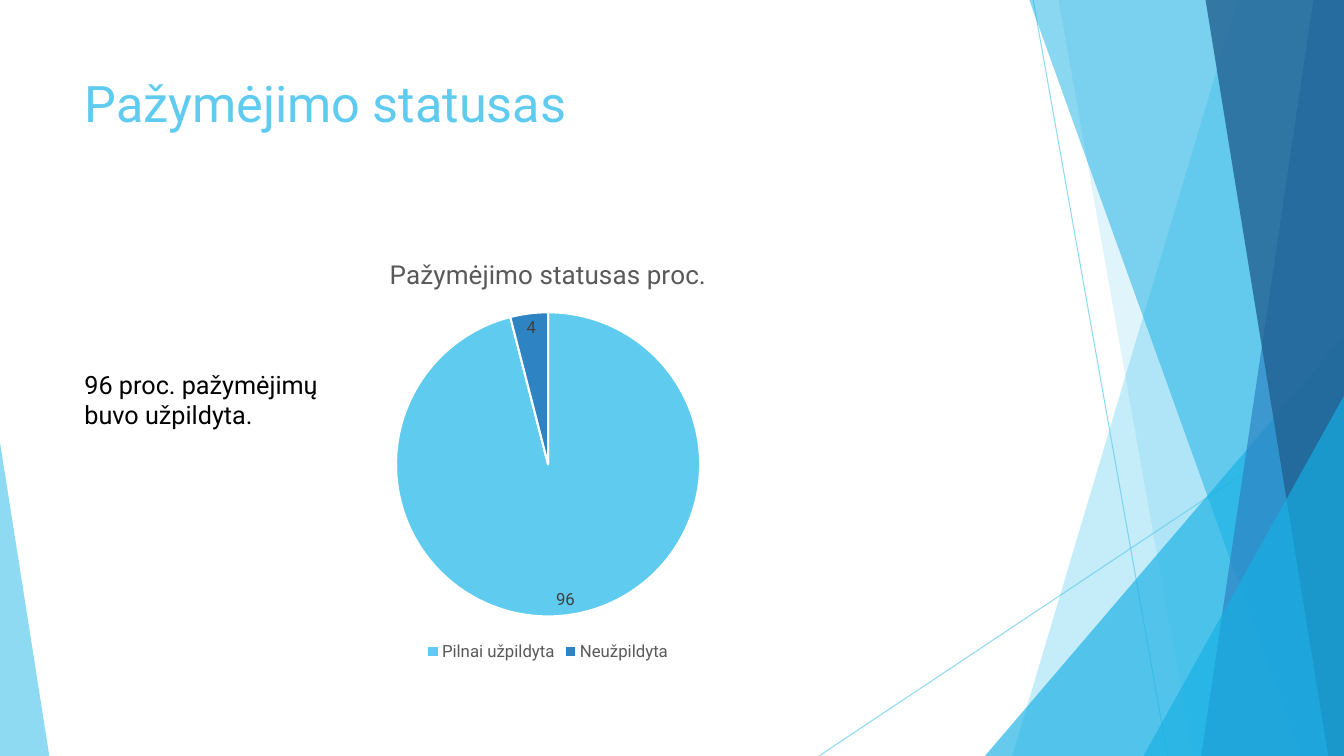
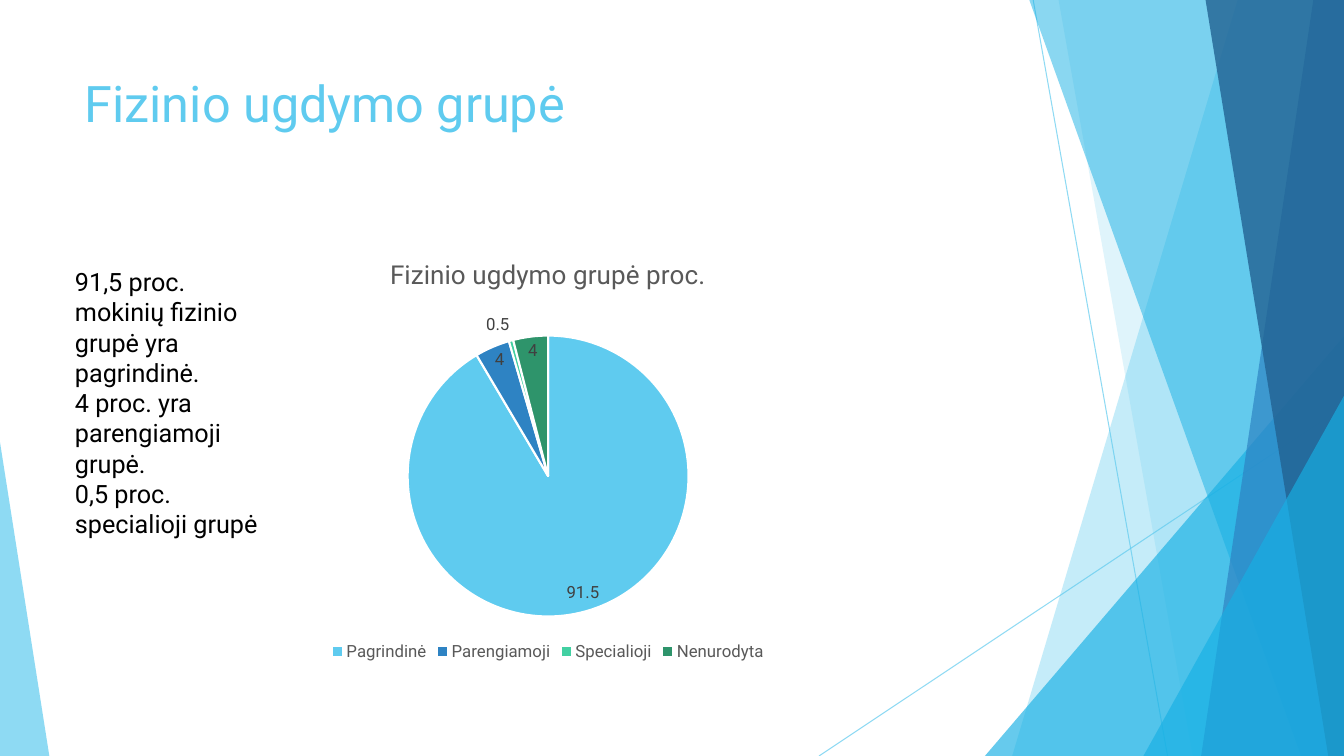
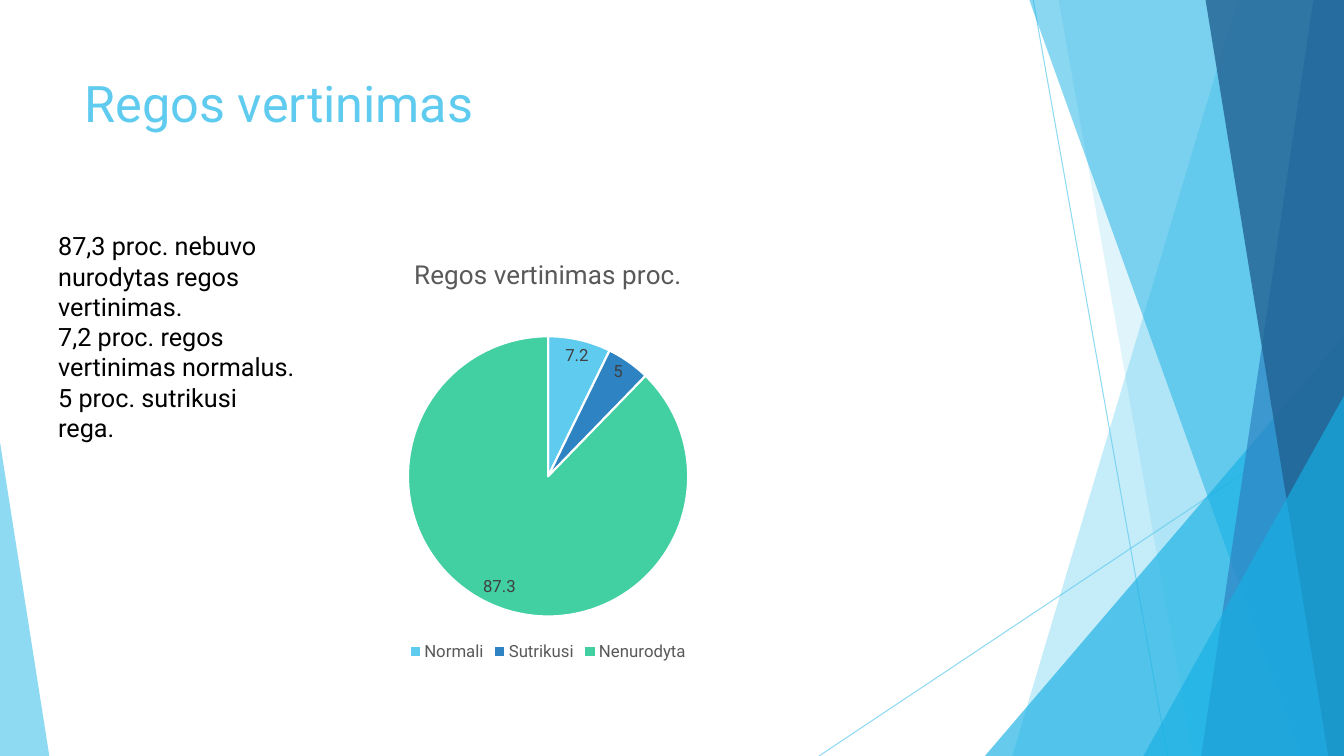
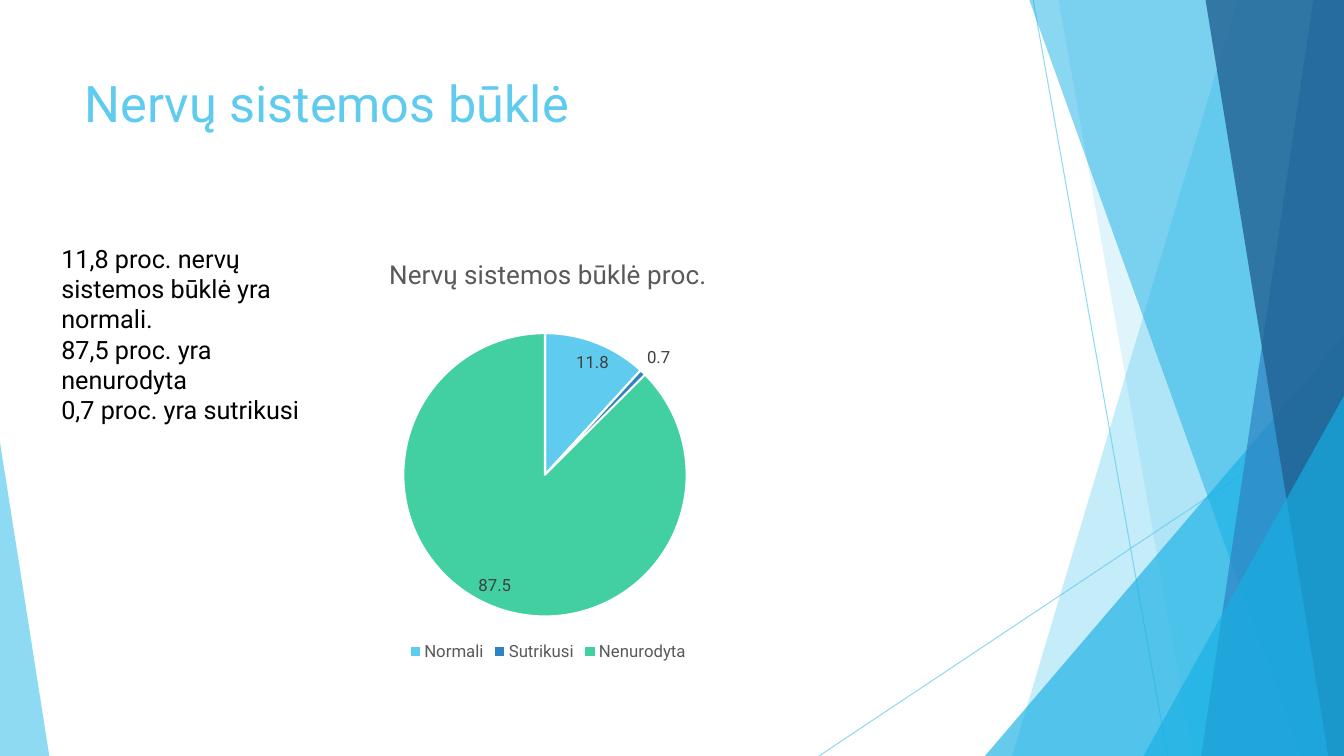
import pptx
import pptx.chart.data
import pptx.dml.color
import pptx.enum.chart
import pptx.enum.shapes
import pptx.enum.text
import pptx.oxml.ns
import pptx.util
import lxml.etree

RGB = pptx.dml.color.RGBColor
SKY = RGB(0x5F, 0xCB, 0xEF)
CYAN = RGB(0x17, 0xB0, 0xE4)
BLUE = RGB(0x2E, 0x83, 0xC3)
NAVY = RGB(0x22, 0x62, 0x92)
MINT = RGB(0x42, 0xD0, 0xA2)
GREEN = RGB(0x2E, 0x94, 0x6B)
BLACK = RGB(0, 0, 0)
WHITE = RGB(0xFF, 0xFF, 0xFF)
GREY = RGB(0x59, 0x59, 0x59)
DARK = RGB(0x40, 0x40, 0x40)
PIE = (SKY, BLUE, MINT, GREEN)

FONT = "Roboto"
SCALE = 9525
WIDE, HIGH = 1280, 720
TITLE = (71, 64, 902, 138)
CHART = (71, 227, 902, 407)

LINES = (((984, 0), (1112, HIGH)), ((WIDE, 387), (780, HIGH)))
BACK = ((1179, 964, SKY, 36), (1008, 1136, SKY, 20))
FRONT = ((980, 1239, CYAN, 50), (1251, 1144, BLUE, 70), (1148, 1265, NAVY, 80))
LARGE = ((938, 320, 342, 400), 1, CYAN, 66)
SMALL = ((1089, 377, 191, 343), 1, CYAN, 66)
LEFT = ((0, 421, 47, 299), 0, SKY, 70)

SLIDES = (
    ("Pažymėjimo statusas",
     {"Pilnai užpildyta": 96, "Neužpildyta": 4},
     (71, 347, 252, 97),
     ("96 proc. pažymėjimų buvo užpildyta.",)),
    ("Fizinio ugdymo grupė",
     {"Pagrindinė": 91.5, "Parengiamoji": 4, "Specialioji": 0.5, "Nenurodyta": 4},
     (62, 249, 213, 272),
     ("91,5 proc. mokinių fizinio grupė yra pagrindinė.",
      "4 proc. yra parengiamoji grupė.",
      "0,5 proc. specialioji grupė")),
    ("Regos vertinimas",
     {"Normali": 7.2, "Sutrikusi": 5, "Nenurodyta": 87.3},
     (46, 215, 248, 213),
     ("87,3 proc. nebuvo nurodytas regos vertinimas.",
      "7,2 proc. regos vertinimas normalus.",
      "5 proc. sutrikusi rega.")),
    ("Nervų sistemos būklė",
     {"Normali": 11.8, "Sutrikusi": 0.7, "Nenurodyta": 87.5},
     (49, 227, 257, 184),
     ("11,8 proc. nervų sistemos būklė yra normali.",
      "87,5 proc. yra nenurodyta",
      "0,7 proc. yra sutrikusi")),
)


def emu(*sizes):
    return [pptx.util.Emu(size * SCALE) for size in sizes]


def style(font, size, color):
    font.name = FONT
    font.size = pptx.util.Pt(size)
    font.color.rgb = color


def fade(item, alpha):
    qn = pptx.oxml.ns.qn
    for color in item.element.iter(qn("a:srgbClr")):
        lxml.etree.SubElement(color, qn("a:alpha"), val=str(alpha * 1000))


def paint(shape, color, alpha):
    shape.shadow.inherit = False
    shape.fill.solid()
    shape.fill.fore_color.rgb = color
    shape.line.fill.background()
    fade(shape, alpha)


def add_line(shapes, start, end):
    line = shapes.add_connector(
        pptx.enum.shapes.MSO_CONNECTOR.STRAIGHT, *emu(*start, *end))
    line.line.color.rgb = SKY
    line.line.width = pptx.util.Pt(0.75)
    lxml.etree.SubElement(line.element.spPr, pptx.oxml.ns.qn("a:effectLst"))
    fade(line, 70)


def add_band(shapes, top, base, color, alpha):
    form = shapes.build_freeform(top, -1, scale=SCALE)
    form.add_line_segments([(WIDE, -1), (WIDE, HIGH), (base, HIGH)], close=True)
    paint(form.convert_to_shape(), color, alpha)


def add_wedge(shapes, box, tip, color, alpha):
    wedge = shapes.add_shape(
        pptx.enum.shapes.MSO_SHAPE.ISOSCELES_TRIANGLE, *emu(*box))
    wedge.adjustments[0] = tip
    paint(wedge, color, alpha)


def place(shape, box):
    shape.left, shape.top, shape.width, shape.height = emu(*box)


def dress(layout, slide):
    group = slide.shapes.add_group_shape()
    shapes = group.shapes
    for start, end in LINES:
        add_line(shapes, start, end)
    for band in BACK:
        add_band(shapes, *band)
    add_wedge(shapes, *LARGE)
    for band in FRONT:
        add_band(shapes, *band)
    for wedge in (SMALL, LEFT):
        add_wedge(shapes, *wedge)
    layout.shapes.element.insert(2, group.element)


def set_title(slide, text):
    title = slide.shapes.title
    place(title, TITLE)
    frame = title.text_frame
    frame.text = text
    frame.vertical_anchor = pptx.enum.text.MSO_ANCHOR.TOP
    para = frame.paragraphs[0]
    para.alignment = pptx.enum.text.PP_ALIGN.LEFT
    style(para.font, 36, SKY)


def add_pie(slide, name, parts):
    data = pptx.chart.data.CategoryChartData()
    data.categories = list(parts)
    data.add_series(name, list(parts.values()))
    kinds = pptx.enum.chart
    chart = slide.shapes.add_chart(
        kinds.XL_CHART_TYPE.PIE, *emu(*CHART), data).chart
    style(chart.font, 10, BLACK)
    chart.has_title = True
    chart.chart_title.text_frame.text = name
    head = chart.chart_title.text_frame.paragraphs[0].font
    style(head, 18.6, GREY)
    head.bold = False
    chart.has_legend = True
    chart.legend.position = kinds.XL_LEGEND_POSITION.BOTTOM
    chart.legend.include_in_layout = False
    style(chart.legend.font, 12, GREY)
    plot = chart.plots[0]
    plot.vary_by_categories = True
    series = plot.series[0]
    for index, color in enumerate(PIE[:len(parts)]):
        form = series.points[index].format
        form.fill.solid()
        form.fill.fore_color.rgb = color
        form.line.color.rgb = WHITE
        form.line.width = pptx.util.Pt(1.5)
    labels = series.data_labels
    labels.show_value = True
    labels.position = kinds.XL_LABEL_POSITION.BEST_FIT
    style(labels.font, 12, DARK)


def add_note(slide, box, lines):
    frame = slide.shapes.add_textbox(*emu(*box)).text_frame
    frame.word_wrap = True
    frame.auto_size = pptx.enum.text.MSO_AUTO_SIZE.SHAPE_TO_FIT_TEXT
    frame.text = "\n".join(lines)
    for para in frame.paragraphs:
        style(para.font, 18, BLACK)


def main():
    deck = pptx.Presentation()
    deck.slide_width, deck.slide_height = emu(WIDE, HIGH)
    layout = deck.slide_layouts[5]
    for index, (title, parts, box, lines) in enumerate(SLIDES):
        slide = deck.slides.add_slide(layout)
        if index == 0:
            dress(layout, slide)
        set_title(slide, title)
        add_pie(slide, title + " proc.", parts)
        add_note(slide, box, lines)
    deck.save("out.pptx")


if __name__ == "__main__":
    main()
